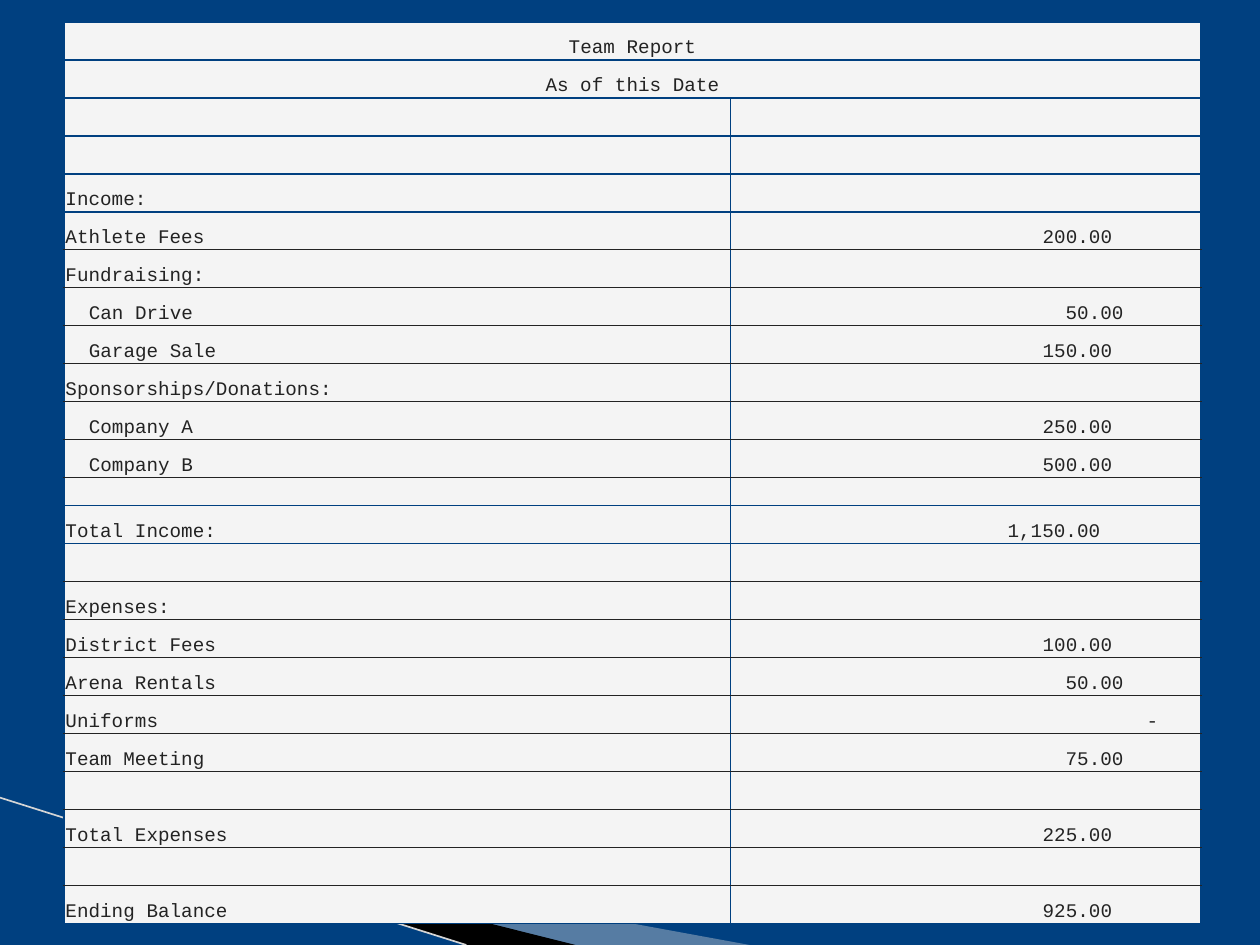
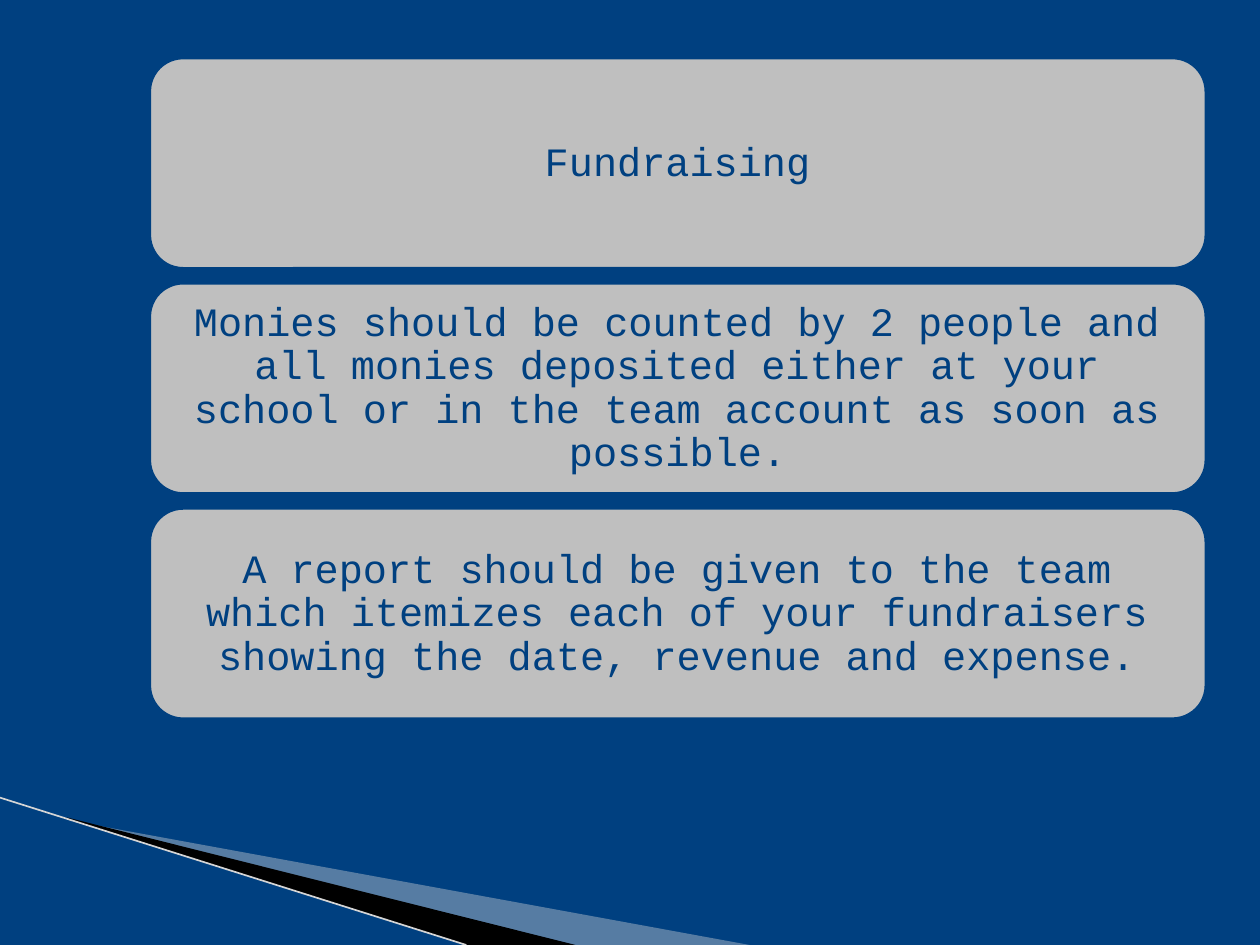
"""Build a team finance report table and a fundraising slide."""
from lxml import etree
from pptx import Presentation
from pptx.dml.color import RGBColor
from pptx.enum.shapes import MSO_CONNECTOR, MSO_SHAPE
from pptx.enum.text import MSO_ANCHOR, PP_ALIGN
from pptx.oxml.ns import qn
from pptx.util import Cm, Pt

LEFT, CENTER, RIGHT = PP_ALIGN.LEFT, PP_ALIGN.CENTER, PP_ALIGN.RIGHT
MIDDLE, BOTTOM = MSO_ANCHOR.MIDDLE, MSO_ANCHOR.BOTTOM
ROUND, STRAIGHT = MSO_SHAPE.ROUNDED_RECTANGLE, MSO_CONNECTOR.STRAIGHT

NAVY = RGBColor(0x00, 0x40, 0x80)
BLACK = RGBColor(0x00, 0x00, 0x00)
INK = RGBColor(0x23, 0x23, 0x23)
PAPER = RGBColor(0xF4, 0xF4, 0xF4)
SILVER = RGBColor(0xBF, 0xBF, 0xBF)
MIST = RGBColor(0xD8, 0xD8, 0xD8)
PALE = RGBColor(0xD5, 0xD5, 0xD5)
FONT = "Courier New"


def write(frame, text, size=11, color=INK, align=LEFT, spacing=1.0):
    para = frame.paragraphs[0]
    para.alignment = align
    para.line_spacing = spacing
    if not text:
        etree.SubElement(para._p, qn("a:endParaRPr"), sz=str(size * 100))
        return
    run = para.add_run()
    run.text = text
    run.font.name = FONT
    run.font.size = Pt(size)
    run.font.color.rgb = color


def edge(cell, side, color, width):
    line = etree.SubElement(cell._tc.get_or_add_tcPr(), qn("a:ln" + side), w=str(Pt(width)))
    fill = etree.SubElement(line, qn("a:solidFill"))
    etree.SubElement(fill, qn("a:srgbClr"), val=str(color))


deck = Presentation()
deck.slide_width, deck.slide_height = Cm(25.4), Cm(19.05)
back = deck.slide_master.background.fill
back.solid()
back.fore_color.rgb = NAVY

BANDS = [
    (MIST, 40, [(1.4, 16.54), (15.11, 19.05), (11.58, 19.05), (1.4, 16.51)]),
    (BLACK, 100, [(1.35, 16.48), (11.6, 19.05), (9.4, 19.05), (1.37, 16.51)]),
]
slides = []
for _ in range(2):
    slide = deck.slides.add_slide(deck.slide_layouts[6])
    slides.append(slide)
    for color, alpha, points in BANDS:
        first, *rest = [(Cm(x), Cm(y)) for x, y in points]
        path = slide.shapes.build_freeform(*first)
        path.add_line_segments(rest)
        band = path.convert_to_shape()
        band.shadow.inherit = False
        band.line.fill.background()
        band.fill.solid()
        band.fill.fore_color.rgb = color
        if alpha < 100:
            tint = band.fill._xPr.find(".//" + qn("a:srgbClr"))
            etree.SubElement(tint, qn("a:alpha"), val=str(alpha * 1000))
    rule = slide.shapes.add_connector(STRAIGHT, 0, Cm(16.08), Cm(9.4), Cm(19.05))
    rule.line.color.rgb = PALE
    rule.line.width = Pt(0.95)
    etree.SubElement(rule._element.spPr, qn("a:effectLst"))

report, funds = slides

ROWS = [
    ("Team Report", ""), ("As of this Date", ""), ("", ""), ("", ""),
    ("Income:", ""), ("Athlete Fees", "200.00"), ("Fundraising:", ""),
    ("Can Drive", "50.00"), ("Garage Sale", "150.00"),
    ("Sponsorships/Donations:", ""), ("Company A", "250.00"),
    ("Company B", "500.00"), ("", ""), ("Total Income:", "1,150.00"), ("", ""),
    ("Expenses:", ""), ("District Fees", "100.00"), ("Arena Rentals", "50.00"),
    ("Uniforms", "-"), ("Team Meeting", "75.00"), ("", ""),
    ("Total Expenses", "225.00"), ("", ""), ("Ending Balance", "925.00"),
]
HEADS = 2
SPACER = 12
NESTED = {"Can Drive", "Garage Sale", "Company A", "Company B"}
BLUE = {0, 1, 2, 3, 4, 5, 13, 14, len(ROWS)}
GAPS = {0: 0.03, 1: 0.86, 5: 1.56, 6: 1.79, 8: 2.03}

grid = report.shapes.add_table(
    len(ROWS), 2, Cm(1.29), Cm(0.44), Cm(22.92), Cm(18.18)).table
grid.first_row = grid.horz_banding = False
grid.columns[0].width, grid.columns[1].width = Cm(13.43), Cm(9.49)
for r in range(HEADS):
    grid.cell(r, 0).merge(grid.cell(r, 1))
for r, texts in enumerate(ROWS):
    grid.rows[r].height = Cm(0.56) if r == SPACER else Cm(17.62) // (len(ROWS) - 1)
    for c, text in enumerate(texts):
        cell = grid.cell(r, c)
        cell.margin_left = Cm(0.5 if text in NESTED else 0.03)
        cell.margin_right = Cm(GAPS[len(text)] if c else 0.03)
        cell.margin_top, cell.margin_bottom = Cm(0.03), 0
        cell.vertical_anchor = BOTTOM
        edge(cell, "L", NAVY, 0.75)
        edge(cell, "R", NAVY, 0.75)
        for side, at in (("T", r), ("B", r + 1)):
            edge(cell, side, *((NAVY, 1) if at in BLUE else (INK, 0.5)))
        cell.fill.solid()
        cell.fill.fore_color.rgb = PAPER
        write(cell.text_frame, text,
              align=CENTER if r < HEADS else RIGHT if c else LEFT)

NOTES = [
    "Fundraising",
    "Monies should be counted by 2 people and all monies deposited either at "
    "your school or in the team account as soon as possible.",
    "A report should be given to the team which itemizes each of your "
    "fundraisers showing the date, revenue and expense.",
]
for i, note in enumerate(NOTES):
    card = funds.shapes.add_shape(
        ROUND, Cm(2.97), Cm(1.12 + 4.54 * i), Cm(21.39), Cm(4.34))
    card.shadow.inherit = False
    card.fill.solid()
    card.fill.fore_color.rgb = SILVER
    card.line.color.rgb = NAVY
    card.line.width = Pt(4.33)
    frame = card.text_frame
    frame.word_wrap = True
    frame.vertical_anchor = MIDDLE
    frame.margin_left = frame.margin_right = Cm(0.25)
    frame.margin_top = frame.margin_bottom = Cm(0.25)
    write(frame, note, size=23, color=NAVY, align=CENTER, spacing=0.9)

deck.save("out.pptx")
